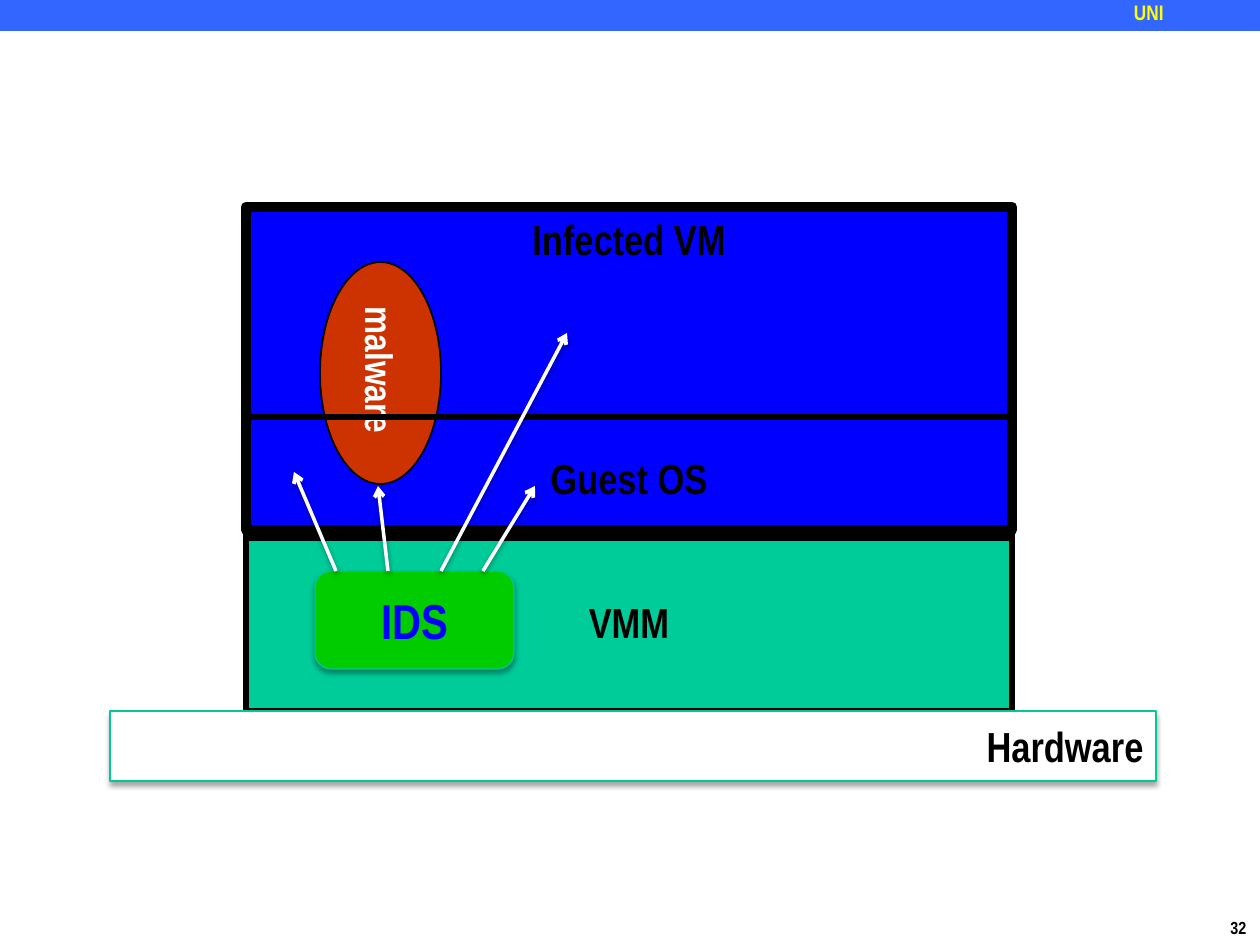
from lxml import etree
from pptx import Presentation
from pptx import util as u
from pptx.dml.color import RGBColor
from pptx.enum import shapes, text
from pptx.oxml.ns import qn

FONT = "Arial Narrow"
SCALE = 914400 / 126  # EMU per px
COLORS = {
    "bar": "3366FF", "yellow": "FFFF00", "black": "000000", "white": "FFFFFF",
    "blue": "0000FF", "red": "CC3300", "teal": "00CC99", "edge": "00C896",
    "green": "00CC00",
}
KINDS = shapes.MSO_SHAPE
ALIGN = text.PP_ALIGN
ANCHOR = text.MSO_ANCHOR
DEFAULTS = dict(kind=KINDS.RECTANGLE, fill=None, line=None, size=24, color="black",
                align=ALIGN.CENTER, anchor=ANCHOR.MIDDLE, wrap=False, inset=None,
                vertical=False, shadow=None)
BOX_SHADOW = dict(alpha=35, blur=3.1, dist=1.8)
ARROW_SHADOW = dict(alpha=38, blur=3.1, dist=1.6)
RAISED = dict(line=("edge", 0.75), wrap=True, shadow=BOX_SHADOW)

# Stack: the layers share one left edge and width
LEFT, WIDTH = 246, 766
IDS_TOP = 571

# (wording, (left, top, width, height), format), back to front
PARTS = [
    ("32", (1218, 911, 43, 34),
     dict(size=10, align=ALIGN.LEFT, anchor=ANCHOR.TOP)),
    ("", (0, 0, 1261, 31), dict(fill="bar")),
    ("UNI", (1134, 0, 126, 28),
     dict(size=12, color="yellow", align=ALIGN.LEFT, anchor=ANCHOR.TOP,
          wrap=True, inset=0)),
    ("Infected VM", (LEFT, 207, WIDTH, 323),
     dict(fill="blue", line=("black", 6), anchor=ANCHOR.TOP)),
    ("malware", (320, 262, 121, 222),
     dict(kind=KINDS.OVAL, fill="red", line=("black", 1), size=22,
          color="white", vertical=True)),
    ("VMM", (LEFT, 532, WIDTH, 179), dict(fill="teal", line=("black", 3))),
    ("Guest OS", (LEFT, 417, WIDTH, 121), dict(line=("black", 3))),
    ("Hardware", (110, 711, 1046, 70),
     dict(RAISED, fill="white", align=ALIGN.RIGHT)),
    ("IDS", (315, IDS_TOP, 199, 98),
     dict(RAISED, kind=KINDS.ROUNDED_RECTANGLE, fill="green", size=28, color="blue")),
]
# (start x on the top edge of IDS, target point)
PROBES = [(483, (535, 486)), (441, (567, 333)), (388, (378, 486)), (336, (294, 472))]


def px(*lengths):
    return [u.Emu(round(n * SCALE)) for n in lengths]


def rgb(name):
    return RGBColor.from_string(COLORS[name])


def add_shadow(effects, alpha, blur, dist):
    """Put a black shadow, falling straight down, into an a:effectLst."""
    outer = etree.SubElement(effects, qn("a:outerShdw"), blurRad=str(u.Pt(blur)),
                             dist=str(u.Pt(dist)), dir="5400000", rotWithShape="0")
    black = etree.SubElement(outer, qn("a:srgbClr"), val=COLORS["black"])
    etree.SubElement(black, qn("a:alpha"), val=str(alpha * 1000))


def set_line(line, color, width):
    line.color.rgb = rgb(color)
    line.width = u.Pt(width)


def write(frame, wording, look):
    settings = dict(word_wrap=look["wrap"], vertical_anchor=look["anchor"])
    if look["inset"] is not None:
        for side in ("left", "top", "right", "bottom"):
            settings["margin_" + side] = look["inset"]
    for key, value in settings.items():
        setattr(frame, key, value)
    if look["vertical"]:
        frame._txBody.bodyPr.set("vert", "eaVert")
    paragraph = frame.paragraphs[0]
    paragraph.alignment = look["align"]
    run = paragraph.add_run()
    run.text = wording
    for key, value in dict(name=FONT, size=u.Pt(look["size"]), bold=True).items():
        setattr(run.font, key, value)
    run.font.color.rgb = rgb(look["color"])


def add_part(slide, wording, place, changes):
    look = {**DEFAULTS, **changes}
    if look["fill"] or look["line"]:
        part = slide.shapes.add_shape(look["kind"], *px(*place))
        part.shadow.inherit = False
        if look["fill"]:
            part.fill.solid()
            part.fill.fore_color.rgb = rgb(look["fill"])
        else:
            part.fill.background()
        if look["line"]:
            set_line(part.line, *look["line"])
        else:
            part.line.fill.background()
        if look["shadow"]:
            add_shadow(part._element.spPr.find(qn("a:effectLst")), **look["shadow"])
    else:
        part = slide.shapes.add_textbox(*px(*place))
    if wording:
        write(part.text_frame, wording, look)


def add_probe(slide, start_x, target):
    probe = slide.shapes.add_connector(shapes.MSO_CONNECTOR.STRAIGHT,
                                       *px(start_x, IDS_TOP, *target))
    set_line(probe.line, "white", 2)
    properties = probe._element.spPr
    etree.SubElement(properties.find(qn("a:ln")), qn("a:tailEnd"), type="arrow")
    add_shadow(etree.SubElement(properties, qn("a:effectLst")), **ARROW_SHADOW)


def main():
    deck = Presentation()
    deck.slide_width, deck.slide_height = px(1260, 945)
    slide = deck.slides.add_slide(deck.slide_layouts[6])
    for part in PARTS:
        add_part(slide, *part)
    for probe in PROBES:
        add_probe(slide, *probe)
    deck.save("out.pptx")


if __name__ == "__main__":
    main()
